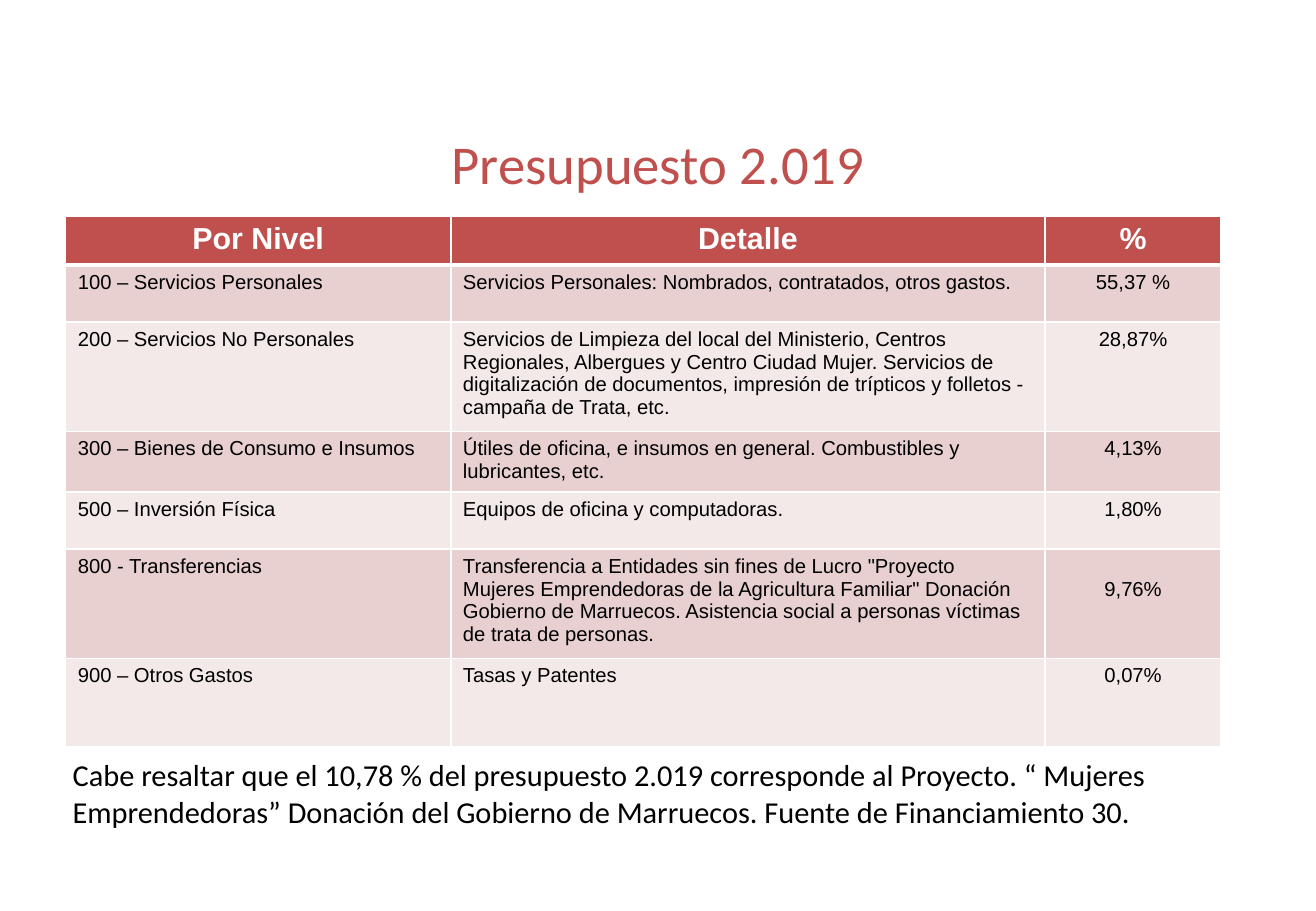
from lxml.etree import SubElement
from pptx import Presentation
from pptx.dml.color import RGBColor
from pptx.enum.text import MSO_ANCHOR, PP_ALIGN
from pptx.oxml.ns import qn
from pptx.util import Inches, Pt

COLORS = {
    "accent": "C0504D",
    "band_dark": "E8D0D0",
    "band_light": "F4E9E9",
    "white": "FFFFFF",
    "black": "000000",
}

COLUMN_WIDTHS = [3.17, 4.89, 1.45]
ROW_HEIGHTS = [0.38, 0.47, 0.85, 0.47, 0.47, 0.85, 0.73]
BUDGET = [
    ("Por Nivel", "Detalle", "%"),
    ("100 – Servicios Personales",
     "Servicios Personales: Nombrados, contratados, otros gastos.", "55,37 %"),
    ("200 – Servicios No Personales",
     "Servicios de Limpieza del local del Ministerio, Centros Regionales, "
     "Albergues y Centro Ciudad Mujer. Servicios de digitalización de documentos, "
     "impresión de trípticos y folletos - campaña de Trata, etc.", "28,87%"),
    ("300 – Bienes de Consumo e Insumos",
     "Útiles de oficina, e insumos en general. Combustibles y lubricantes, etc.",
     "4,13%"),
    ("500 – Inversión Física", "Equipos de oficina y computadoras.", "1,80%"),
    ("800 - Transferencias",
     'Transferencia a Entidades sin fines de Lucro "Proyecto Mujeres Emprendedoras '
     'de la Agricultura Familiar" Donación Gobierno de Marruecos. Asistencia social '
     "a personas víctimas de trata de personas.", "9,76%"),
    ("900 – Otros Gastos", "Tasas y Patentes", "0,07%"),
]
TRANSFERS_ROW = 5
NOTE = ("Cabe resaltar que el 10,78 % del presupuesto 2.019 corresponde al Proyecto. "
        "“ Mujeres Emprendedoras” Donación del Gobierno de Marruecos. "
        "Fuente de Financiamiento 30.")


def rgb(color):
    return RGBColor.from_string(COLORS[color])


def write(frame, text, font, size, color, align=PP_ALIGN.LEFT, bold=False):
    frame.text = text
    frame.word_wrap = True
    paragraph = frame.paragraphs[0]
    paragraph.alignment = align
    run_font = paragraph.runs[0].font
    run_font.name = font
    run_font.size = Pt(size)
    run_font.bold = bold
    run_font.color.rgb = rgb(color)


def add_text(slide, left, top, width, height, text, size, color, **style):
    box = slide.shapes.add_textbox(
        Inches(left), Inches(top), Inches(width), Inches(height))
    write(box.text_frame, text, "Calibri", size, color, **style)
    return box


def set_borders(cell, bottom_width):
    """Draw white cell borders, which must precede the fill in the XML."""
    properties = cell._tc.get_or_add_tcPr()
    for side, width in (("L", 1), ("R", 1), ("T", 1), ("B", bottom_width)):
        line = SubElement(properties, qn(f"a:ln{side}"), w=str(Pt(width)))
        fill = SubElement(line, qn("a:solidFill"))
        SubElement(fill, qn("a:srgbClr"), val=COLORS["white"])


def fill_cell(cell, text, row, column):
    header = row == 0
    centered = header or column == 2
    set_borders(cell, 3 if header else 1)
    cell.fill.solid()
    band = "band_dark" if row % 2 else "band_light"
    cell.fill.fore_color.rgb = rgb("accent" if header else band)
    write(cell.text_frame, text, "Arial", 18 if header else 12,
          "white" if header else "black",
          align=PP_ALIGN.CENTER if centered else PP_ALIGN.LEFT, bold=header)


def add_budget_table(slide):
    frame = slide.shapes.add_table(
        len(BUDGET), len(COLUMN_WIDTHS), Inches(0.54), Inches(1.78),
        Inches(sum(COLUMN_WIDTHS)), Inches(sum(ROW_HEIGHTS)))
    table = frame.table
    for column, width in zip(table.columns, COLUMN_WIDTHS):
        column.width = Inches(width)
    for row, height in zip(table.rows, ROW_HEIGHTS):
        row.height = Inches(height)
    for row, entries in enumerate(BUDGET):
        for column, text in enumerate(entries):
            fill_cell(table.cell(row, column), text, row, column)
    # The transfers percentage sits on the second line of its row.
    table.cell(TRANSFERS_ROW, 2).margin_top = Inches(0.24)


def main():
    presentation = Presentation()
    presentation.slide_width = Inches(10.83)
    presentation.slide_height = Inches(7.5)
    slide = presentation.slides.add_slide(presentation.slide_layouts[6])

    title = add_text(slide, 0.54, 1.04, 9.75, 0.6, "Presupuesto 2.019", 32.4,
                     "accent", align=PP_ALIGN.CENTER)
    title.text_frame.vertical_anchor = MSO_ANCHOR.MIDDLE
    add_budget_table(slide)
    add_text(slide, 0.5, 6.18, 9.57, 0.71, NOTE, 18, "black")

    presentation.save("out.pptx")


if __name__ == "__main__":
    main()
